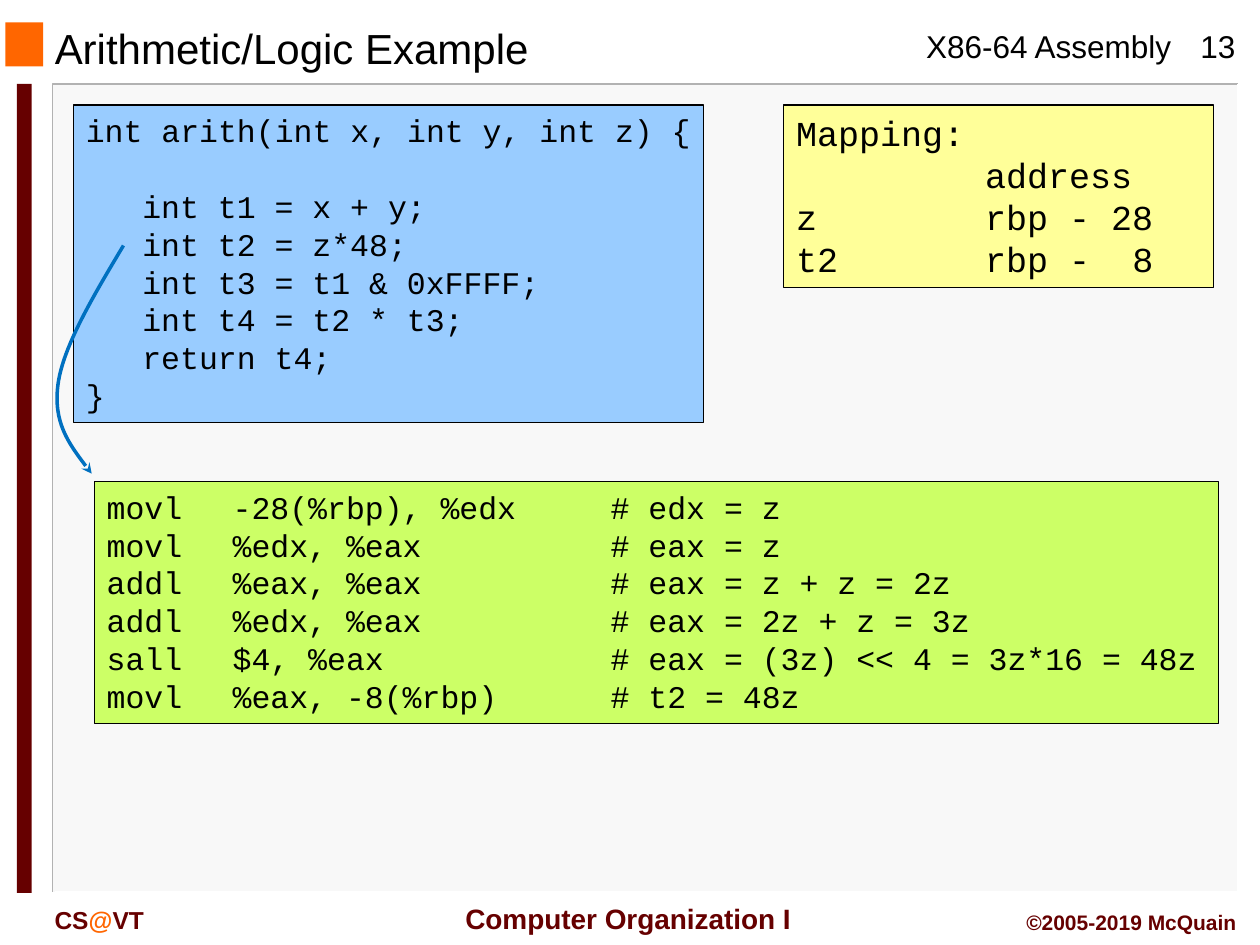
from lxml import etree
from pptx import Presentation
from pptx.dml.color import RGBColor
from pptx.enum.shapes import MSO_SHAPE
from pptx.enum.text import MSO_ANCHOR, MSO_AUTO_SIZE, PP_ALIGN
from pptx.oxml.ns import qn
from pptx.util import Cm, Pt

RECTANGLE = MSO_SHAPE.RECTANGLE
LEFT, CENTER, RIGHT = PP_ALIGN.LEFT, PP_ALIGN.CENTER, PP_ALIGN.RIGHT
TOP, MIDDLE = MSO_ANCHOR.TOP, MSO_ANCHOR.MIDDLE
NO_AUTO_SIZE = MSO_AUTO_SIZE.NONE

BLACK, MAROON, ORANGE = "000000", "660000", "FF6600"
CODE_INDENT = 1.14  # three characters at 18 pt
LINE_PITCH = 21.6


def color(value):
    return RGBColor.from_string(value)


def lengths(values):
    return [Cm(value) for value in values]


class SlideBuilder:
    text_font = "Arial"
    code_font = "Courier New"

    def __init__(self, slide):
        self.slide = slide

    def set_font(self, font, name, size, fill=BLACK, bold=False):
        font.name, font.size, font.bold = name, Pt(size), bold
        font.color.rgb = color(fill)

    def title(self, text, box):
        title = self.slide.shapes.title
        title.left, title.top, title.width, title.height = lengths(box)
        frame = title.text_frame
        frame.text = text
        frame.auto_size = NO_AUTO_SIZE
        frame.vertical_anchor = MIDDLE
        paragraph = frame.paragraphs[0]
        paragraph.alignment = LEFT
        self.set_font(paragraph.font, self.text_font, 24)

    def label(self, text, box, size, fill=BLACK, bold=False,
              alignment=LEFT, anchor=TOP, wrap=True):
        shape = self.slide.shapes.add_textbox(*lengths(box))
        frame = shape.text_frame
        frame.word_wrap = wrap
        frame.vertical_anchor = anchor
        paragraph = frame.paragraphs[0]
        paragraph.alignment = alignment
        self.set_font(paragraph.font, self.text_font, size, fill, bold)
        paragraph.add_run().text = text
        return paragraph

    def rectangle(self, box, fill, line=None):
        shape = self.slide.shapes.add_shape(RECTANGLE, *lengths(box))
        shape.shadow.inherit = False
        shape.fill.solid()
        shape.fill.fore_color.rgb = color(fill)
        if line:
            shape.line.color.rgb = color(line)
            shape.line.width = Pt(0.75)
        else:
            shape.line.fill.background()
        return shape

    def code_box(self, lines, box, fill, size=18, tabs=()):
        """Each line is (text, indent in cm, space before in points)."""
        frame = self.rectangle(box, fill, BLACK).text_frame
        frame.word_wrap = True
        frame.margin_right = 0
        frame.vertical_anchor = TOP
        for number, (text, indent, space) in enumerate(lines):
            paragraph = frame.paragraphs[0] if number == 0 else frame.add_paragraph()
            paragraph.text = text
            paragraph.alignment = LEFT
            paragraph.space_before = Pt(space)
            self.set_tabs(paragraph, indent, tabs)
            self.set_font(paragraph.font, self.code_font, size)

    def set_tabs(self, paragraph, indent, tabs):
        """An explicit indent overrides tab stops, so a zero one is not written."""
        properties = paragraph._p.get_or_add_pPr()
        if indent:
            properties.set("marL", str(Cm(indent)))
            properties.set("indent", "0")
        if tabs:
            tab_list = etree.SubElement(properties, qn("a:tabLst"))
            for position, side in tabs:
                etree.SubElement(tab_list, qn("a:tab"), pos=str(Cm(position)), algn=side)

    def polyline(self, points, line, width):
        start, *rest = [lengths(point) for point in points]
        builder = self.slide.shapes.build_freeform(*start)
        builder.add_line_segments(rest, close=False)
        shape = builder.convert_to_shape()
        shape.shadow.inherit = False
        shape.fill.background()
        shape.line.color.rgb = color(line)
        shape.line.width = Pt(width)
        return shape

    def curved_arrow(self, points, line, width):
        """Turn every three points after the start into one Bézier segment."""
        shape = self.polyline(points, line, width)
        path = next(shape._element.iter(qn("a:path")))
        segments = path.findall(qn("a:lnTo"))
        for first in range(0, len(segments), 3):
            curve = etree.SubElement(path, qn("a:cubicBezTo"))
            for segment in segments[first:first + 3]:
                curve.append(segment[0])
                path.remove(segment)
        outline = shape.line._get_or_add_ln()
        etree.SubElement(outline, qn("a:tailEnd"), type="stealth")


def add_frame(builder):
    left, top, right, bottom = 1.06, 1.7, 24.95, 17.98
    builder.rectangle((left, top, right - left, bottom - top), "F8F8F8")
    builder.polyline([(right, top), (left, top), (left, bottom)], "B2B2B2", 1)
    builder.polyline([(right, top), (right, bottom), (left + 0.05, bottom)], "FFFFFF", 1)
    builder.rectangle((0.11, 0.45, 0.76, 0.89), ORANGE)
    builder.rectangle((0.34, 1.69, 0.3, 16.31), MAROON)

    builder.label("X86-64 Assembly", (18.42, 0.43, 5.51, 1.02), 18, wrap=False)
    builder.label("13", (23.7, 0.43, 1.7, 1.02), 18, alignment=CENTER)
    builder.label("Computer Organization I", (8.97, 18.05, 7.39, 0.94), 16, MAROON,
                  True, CENTER, MIDDLE, wrap=False)
    department = builder.label("CS", (0.85, 18.11, 3.81, 0.84), 14, MAROON, True)
    at_sign = department.add_run()
    at_sign.text = "@"
    at_sign.font.color.rgb = color(ORANGE)
    department.add_run().text = "VT"
    builder.label("©2005-2019 McQuain", (19.9, 18.21, 5.28, 0.76), 12, MAROON,
                  True, RIGHT)


def main():
    presentation = Presentation()
    presentation.slide_width, presentation.slide_height = Cm(25.4), Cm(19.05)
    slide = presentation.slides.add_slide(presentation.slide_layouts[5])
    builder = SlideBuilder(slide)

    add_frame(builder)
    builder.title("Arithmetic/Logic Example", (0.85, 0.48, 16.08, 0.97))

    builder.code_box([
        ("int arith(int x, int y, int z) {", 0, 0),
        ("int t1 = x + y;", CODE_INDENT, LINE_PITCH),
        ("int t2 = z*48;", CODE_INDENT, 0),
        ("int t3 = t1 & 0xFFFF;", CODE_INDENT, 0),
        ("int t4 = t2 * t3;", CODE_INDENT, 0),
        ("return t4;", CODE_INDENT, 0),
        ("}", 0, 0),
    ], (1.48, 2.12, 12.7, 6.4), "99CCFF")

    mapping = ["Mapping:", "\taddress", "z\trbp -\t28", "t2\trbp -\t8"]
    builder.code_box([(text, 0, 0) for text in mapping], (15.8, 2.12, 8.67, 3.68),
                     "FFFF99", 20, [(3.81, "l"), (7.2, "r")])

    instructions = [
        ("movl", "-28(%rbp), %edx", "# edx = z"),
        ("movl", "%edx, %eax", "# eax = z"),
        ("addl", "%eax, %eax", "# eax = z + z = 2z"),
        ("addl", "%edx, %eax", "# eax = 2z + z = 3z"),
        ("sall", "$4, %eax", "# eax = (3z) << 4 = 3z*16 = 48z"),
        ("movl", "%eax, -8(%rbp)", "# t2 = 48z"),
    ]
    builder.code_box([("\t".join(parts), 0, 0) for parts in instructions],
                     (1.9, 9.71, 22.66, 4.88), "CCFF66",
                     tabs=[(2.54, "l"), (10.16, "l")])

    builder.curved_arrow([(2.49, 4.95), (1.88, 5.97), (1.27, 6.99), (1.17, 7.75),
                          (1.07, 8.51), (1.45, 9.04), (1.85, 9.55)], "0070C0", 2)

    presentation.save("out.pptx")


if __name__ == "__main__":
    main()
